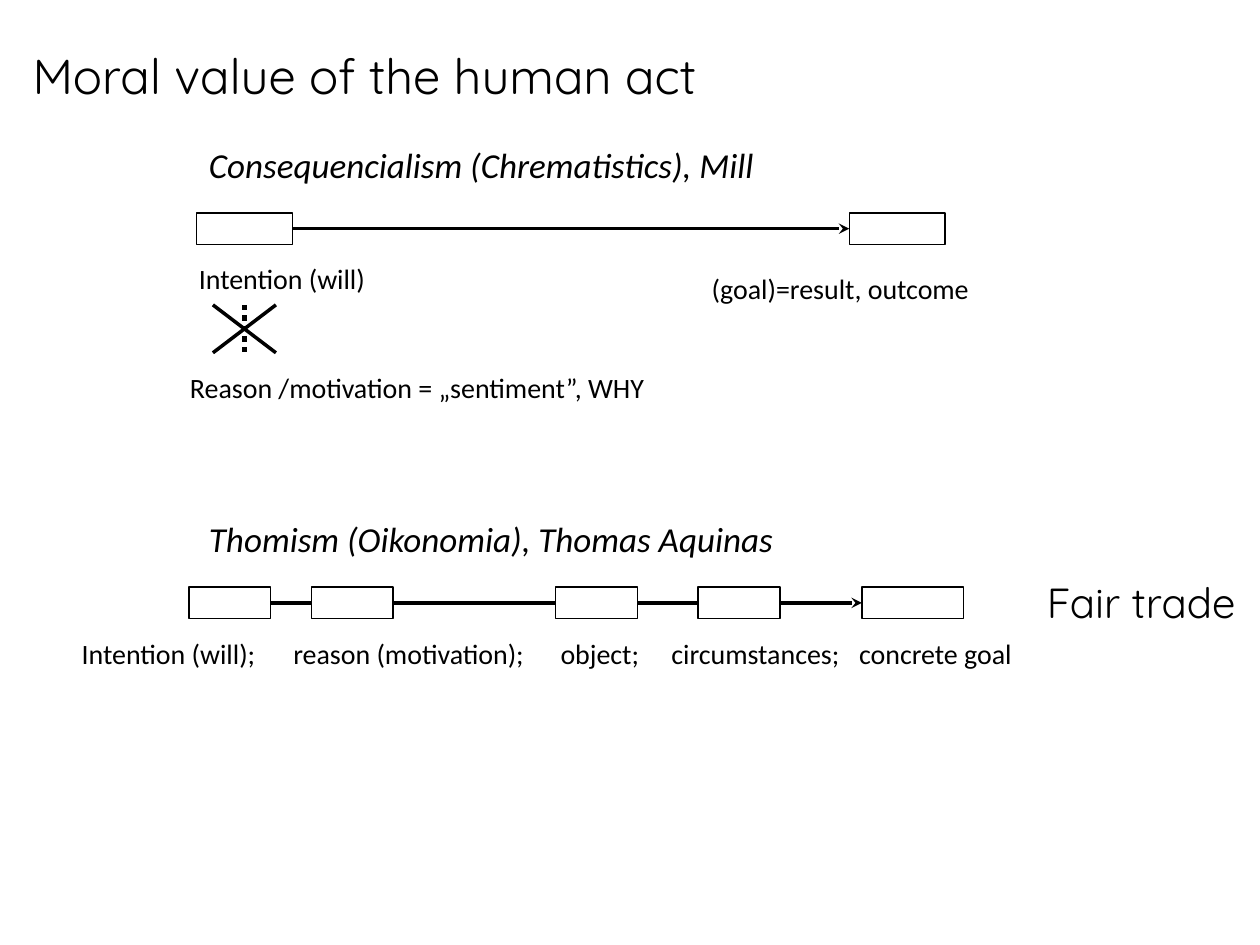
from itertools import pairwise
from pptx import Presentation as Deck
from pptx.dml.color import RGBColor as Color
from pptx.enum.dml import MSO_LINE as Dash
from pptx.enum.shapes import MSO_CONNECTOR as Link, MSO_SHAPE as Form
from pptx.enum.text import MSO_AUTO_SIZE as Fit
from pptx.oxml.ns import qn
from pptx.util import Inches, Pt
from lxml.etree import SubElement as Sub

COLS, ROWS = 100, 75
HEX = {"ink": "000000", "paper": "FFFFFF"}
TEXT = {
    "title": {"name": "Quicksand", "size": Pt(28)},
    "side": {"name": "Quicksand", "size": Pt(24)},
    "head": {"name": "Calibri", "size": Pt(20), "italic": True},
    "note": {"name": "Calibri", "size": Pt(16)},
}


class Board:
    """Hold the style and the current slide, measured on a grid of columns and rows."""

    def __init__(self):
        self.deck = Deck()
        self.deck.slide_width, self.deck.slide_height = Inches(10), Inches(7.5)
        self.slide = self.deck.slides.add_slide(self.deck.slide_layouts[6])
        self.ink, self.paper = (Color.from_string(HEX[key]) for key in ("ink", "paper"))
        self.group()

    def group(self):
        self.host = self.slide.shapes.add_group_shape().shapes

    def spot(self, col, row):
        return (round(self.deck.slide_width * col / COLS),
                round(self.deck.slide_height * row / ROWS))

    def stroke(self, shape, **looks):
        shape.line.color.rgb = self.ink
        for key, value in looks.items():
            setattr(shape.line, key, value)

    def box(self, col, row, wide, high):
        shape = self.host.add_shape(
            Form.RECTANGLE, *self.spot(col, row), *self.spot(wide, high))
        shape.shadow.inherit = False
        shape.fill.solid()
        shape.fill.fore_color.rgb = self.paper
        self.stroke(shape, width=Pt(0.75))

    def line(self, start, end, arrow=False, **looks):
        wire = self.host.add_connector(Link.STRAIGHT, *self.spot(*start), *self.spot(*end))
        self.stroke(wire, **{"width": Pt(2), **looks})
        if arrow:
            Sub(wire.line._get_or_add_ln(), qn("a:tailEnd"), type="stealth")
        Sub(wire._element.spPr, qn("a:effectLst"))

    def chain(self, row, boxes, high=2.5):
        self.group()
        for col, wide in boxes:
            self.box(col, row, wide, high)
        mid = row + high / 2
        for (col, wide), (goal, _) in pairwise(boxes):
            self.line((col + wide, mid), (goal, mid), arrow=goal == boxes[-1][0])

    def cross(self, col, row, wide, high):
        self.group()
        mid, right, low = col + wide / 2, col + wide, row + high
        self.line((mid, row), (mid, low), width=Pt(3), dash_style=Dash.ROUND_DOT)
        self.line((col, row), (right, low))
        self.line((col, low), (right, row))

    def text(self, words, style, col, row, wide, high, stops=()):
        frame = self.slide.shapes.add_textbox(
            *self.spot(col, row), *self.spot(wide, high)).text_frame
        frame.word_wrap = bool(stops)
        frame.auto_size = Fit.SHAPE_TO_FIT_TEXT
        para = frame.paragraphs[0]
        run = para.add_run()
        run.text = words
        run.font.color.rgb = self.ink
        for key, value in TEXT[style].items():
            setattr(run.font, key, value)
        if stops:
            tabs = Sub(para._p.get_or_add_pPr(), qn("a:tabLst"))
            for stop in stops:
                Sub(tabs, qn("a:tab"), pos=str(self.spot(stop, 0)[0]), algn="l")


def main():
    board = Board()
    board.host = board.slide.shapes
    for blank in list(board.slide.shapes):
        blank._element.getparent().remove(blank._element)
    board.chain(16.9, [(15.6, 7.6), (67.4, 7.6)])
    board.cross(16.9, 24.2, 5, 3.8)
    board.chain(46.6, [(15, 6.5), (24.7, 6.5), (44.1, 6.5), (55.4, 6.5), (68.4, 8.1)])

    labels = [
        ("Moral value of the human act", "title", 1.6, 3.1, 56.9, 5.7),
        ("Consequencialism (Chrematistics), Mill", "head", 15.6, 10.9, 45.7, 4.4),
        ("Intention (will)", "note", 14.8, 20.3, 15.4, 3.7),
        ("(goal)=result, outcome", "note", 55.5, 21.1, 22.7, 3.7),
        ("Reason /motivation = „sentiment”, WHY", "note", 14.1, 28.9, 38.6, 3.7),
        ("Thomism (Oikonomia), Thomas Aquinas", "head", 15.6, 40.6, 47.2, 4.4),
    ]
    for label in labels:
        board.text(*label)
    steps = ["Intention (will);", "reason (motivation);", "object;",
             "circumstances;", "concrete goal"]
    board.text("\t".join(steps), "note", 5.5, 50, 78.8, 3.7, stops=(16.8, 38, 46.8, 61.7))
    board.text("Fair trade", "side", 82.1, 45.3, 17.9, 5)
    board.deck.save("out.pptx")


if __name__ == "__main__":
    main()
